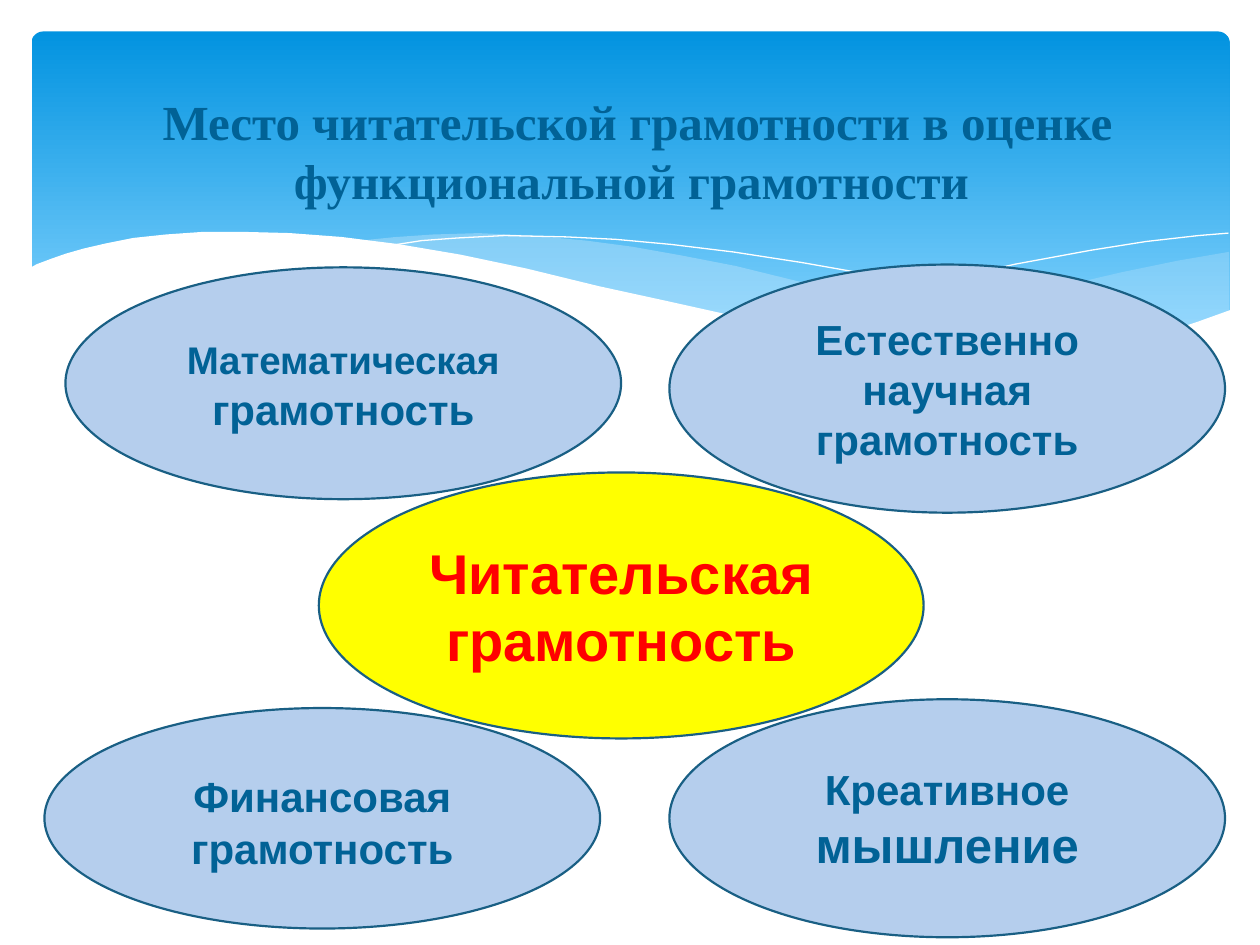
from pptx import Presentation
from pptx.util import Pt
from pptx.dml.color import RGBColor
from pptx.enum.shapes import MSO_SHAPE as Shp
from pptx.enum.text import PP_ALIGN as Al, MSO_ANCHOR as Anc
from lxml.etree import SubElement as Sub
from pptx.oxml.ns import qn


def paint(fill, hexa, alpha=None):
    fill.solid()
    fill.fore_color.rgb = RGBColor.from_string(hexa)
    if alpha:
        clr = fill._xPr.find(qn("a:solidFill"))[0]
        Sub(clr, qn("a:alpha"), val=str(alpha * 1000))


def write(frame, paras, face, color):
    frame.word_wrap = True
    for i, runs in enumerate(paras):
        para = frame.paragraphs[0] if i == 0 else frame.add_paragraph()
        para.alignment = Al.CENTER
        for text, size in runs:
            run = para.add_run()
            run.text = text
            style = {"name": face, "size": Pt(size), "bold": True}
            for key, val in style.items():
                setattr(run.font, key, val)
            paint(run.font.fill, color)


deck = Presentation()
deck.slide_width, deck.slide_height = Pt(720), Pt(540)
slide = deck.slides.add_slide(deck.slide_layouts[6])
shapes = slide.shapes

# Blue banner
band = shapes.add_shape(Shp.ROUNDED_RECTANGLE, Pt(18), Pt(18), Pt(684.7), Pt(194.4))
band.shadow.inherit = False
band.adjustments[0] = 0.034
band.line.fill.background()
band.fill.gradient()
band.fill.gradient_angle = 270
for stop, (pos, hexa) in zip(band.fill.gradient_stops, [(0, "0293E0"), (0.9, "83D3FE")]):
    stop.position = pos
    stop.color.rgb = RGBColor.from_string(hexa)

# Waves: points, fill, alpha; those without a fill are thin white lines
waves = [
    ([(702, 144), (673, 149), (641.5, 155.5), (620, 160.5), (579.5, 170.5),
      (542, 178.5), (508, 185), (476, 191), (497.5, 193.5), (527, 197),
      (553.5, 199.5), (586, 200), (615, 198.5), (640, 196), (663, 191),
      (683, 185), (702.5, 178), (702.5, 144)], "C6E7FC", 29),
    ([(643, 196.5), (623.5, 193.5), (581, 187), (533.5, 178), (481, 166.5),
      (453, 160), (420.5, 152), (389.5, 146), (361.5, 141), (335, 137.5),
      (302.5, 134.5), (273.5, 133.2), (247.5, 134), (225.5, 135.5),
      (206, 137.5), (232.5, 141), (260.5, 146), (291, 152), (323, 160),
      (381.5, 173), (420.5, 181.5), (456.5, 188), (489.5, 193), (520, 197),
      (548, 199.5), (573, 200), (603.5, 200), (624, 198.5)], "C6E7FC", 40),
    ([(222.5, 140.4), (241, 137.5), (261.5, 136), (288.5, 134.6), (324, 135.4),
      (352, 136.8), (383.5, 139.7), (419, 144), (458, 150), (500.5, 157.5),
      (547, 167.8), (598, 180.7), (653, 195.8)], None, None),
    ([(441.5, 185), (470, 177), (500.5, 169), (538.5, 160.5), (580, 151),
      (623.5, 143), (655, 138), (685, 134.6), (702, 133.2)], None, None),
    ([(703.5, 177), (684, 184), (662.5, 191), (639, 195), (612, 198),
      (582.5, 199.4), (548, 198), (510, 194.5), (466.5, 188.5), (417, 180),
      (381, 172), (342, 163.5), (301, 153.5), (263, 145.5), (227.5, 139.5),
      (195, 135.4), (165.5, 133.2), (139, 132.5), (116, 132.5), (95, 134),
      (76, 136), (61, 139), (48, 142), (37.5, 145), (29, 148), (21, 151),
      (16.5, 153.5), (16.5, 237), (703.5, 237)], "FFFFFF", None),
]
for pts, hexa, alpha in waves:
    pts = [(Pt(x), Pt(y)) for x, y in pts]
    pen = shapes.build_freeform(*pts[0], scale=1.0)
    pen.add_line_segments(pts[1:], close=bool(hexa))
    wave = pen.convert_to_shape()
    wave.shadow.inherit = False
    if hexa:
        paint(wave.fill, hexa, alpha)
        wave.line.fill.background()
    else:
        wave.fill.background()
        paint(wave.line.fill, "FFFFFF")
        wave.line.width = Pt(0)

# Title
box = shapes.add_textbox(Pt(58.3), Pt(49), Pt(612), Pt(99.4))
title = "Место читательской грамотности в оценке функциональной грамотности "
write(box.text_frame, [[(title, 28)]], "Times New Roman", "016296")
box.text_frame.paragraphs[0].space_before = Pt(5.6)

# Ellipses: place, fill, text colour, paragraphs of (text, size)
pale, navy = "B5CEED", "016296"
ovals = [
    ((182.2, 270, 345.6, 152), "FFFF00", "FF0000", [[("Читательская грамотность", 32)]]),
    ((37.4, 152.8, 317.5, 132.5), pale, navy,
     [[("Математическая", 22), (" грамотность", 24)]]),
    ((382.5, 151.2, 317.5, 141.8), pale, navy,
     [[("Естественно", 24)], [("научная", 24)], [("грамотность", 24)]]),
    ((25.4, 404.6, 317.5, 126), pale, navy,
     [[("Финансовая", 24), (" ", 28), ("грамотность", 24)]]),
    ((382.5, 399.6, 317.5, 136), pale, navy, [[("Креативное ", 24), ("мышление", 28)]]),
]
for place, hexa, ink, paras in ovals:
    oval = shapes.add_shape(Shp.OVAL, *map(Pt, place))
    oval.shadow.inherit = False
    paint(oval.fill, hexa)
    paint(oval.line.fill, "195F84")
    oval.line.width = Pt(1.25)
    oval.text_frame.vertical_anchor = Anc.MIDDLE
    write(oval.text_frame, paras, "Arial", ink)

deck.save("out.pptx")
